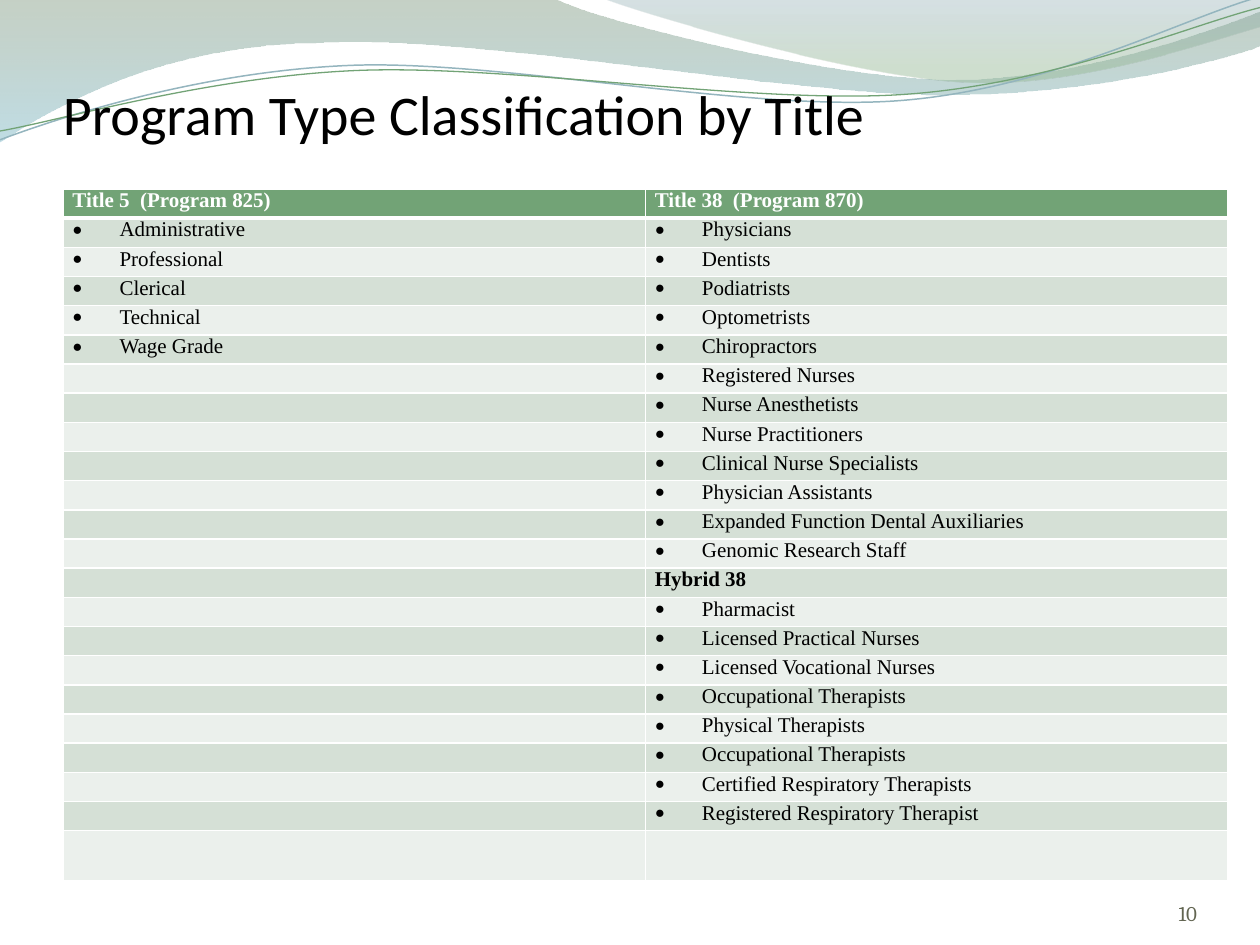
from pptx import Presentation
from pptx.dml.color import RGBColor
from pptx.enum.text import MSO_ANCHOR, PP_ALIGN
from pptx.oxml.ns import qn
from pptx.util import Cm, Pt
from lxml.etree import SubElement

# Content
TITLE = "Program Type Classification by Title"
NUMBER = "10"
HEADS = ["Title 5  (Program 825)", "Title 38  (Program 870)"]
LEFT = ["Administrative", "Professional", "Clerical", "Technical", "Wage Grade"]
HYBRID = "Hybrid 38"
RIGHT = [
    "Physicians", "Dentists", "Podiatrists", "Optometrists", "Chiropractors",
    "Registered Nurses", "Nurse Anesthetists", "Nurse Practitioners",
    "Clinical Nurse Specialists", "Physician Assistants",
    "Expanded Function Dental Auxiliaries", "Genomic Research Staff",
    HYBRID, "Pharmacist", "Licensed Practical Nurses",
    "Licensed Vocational Nurses", "Occupational Therapists",
    "Physical Therapists", "Occupational Therapists",
    "Certified Respiratory Therapists", "Registered Respiratory Therapist",
]
GREEN, BANDS, WHITE, BLACK = "72A376", ["EBF0EC", "D5E0D6"], "FFFFFF", "000000"
SERIF = "Times New Roman"

# Waves: a pair is a line to a point, six numbers are a Bezier curve.
# Coordinates are in units of 2.54 cm.
BLOBS = [
    ([(0, -0.01), (4.4, -0.01), (4.76, 0.17, 6.64, 0.63, 7.58, 0.63),
      (8.53, 0.63, 9.58, 0.26, 10, 0.09), (10.01, 0.36),
      (9.83, 0.44, 8.7, 0.76, 7.46, 0.75), (6.22, 0.75, 3.82, 0.28, 2.57, 0.34),
      (1.29, 0.35, 0.46, 0.83, -0.01, 1.13)],
     [(0, "809980", 45), (1, "8DC1CF", 55)]),
    ([(4.79, -0.01), (5.09, 0.11, 6.82, 0.62, 7.69, 0.65),
      (8.56, 0.69, 9.61, 0.32, 10, 0.21), (10, 0)],
     [(0, "779BA4", 30), (0.8, "96B996", 45)]),
]
LINES = [
    ([(0, 1.11), (0.48, 0.93, 1.58, 0.57, 2.77, 0.52),
      (3.95, 0.47, 5.93, 0.89, 7.13, 0.8), (8.33, 0.71, 9.38, 0.15, 9.98, -0.02)],
     "94B5BE", 0.85),
    ([(0, 1.04), (0.47, 0.96, 1.64, 0.61, 2.83, 0.56),
      (4.03, 0.51, 5.97, 0.83, 7.17, 0.75), (8.36, 0.67, 9.41, 0.21, 10, 0.06)],
     GREEN, 0.75),
]


def color(code):
    return RGBColor.from_string(code)


def wave(steps, close):
    """Draw the end points as a freeform, then bend its segments."""
    steps = [[Cm(2.54 * n) for n in step] for step in steps]
    ends = [step[-2:] for step in steps]
    pen = slide.shapes.build_freeform(*ends[0])
    pen.add_line_segments(ends[1:], close=close)
    shape = pen.convert_to_shape()
    shape.shadow.inherit = False
    nodes = list(shape._element.iter(qn("a:lnTo")))
    for node, step in zip(nodes, steps[1:]):
        if len(step) == 6:
            node.tag = qn("a:cubicBezTo")
            for i in (0, 1):
                x, y = step[2 * i:2 * i + 2]
                knot = SubElement(node, qn("a:pt"), x=str(x - shape.left),
                                  y=str(y - shape.top))
                node.insert(i, knot)
    return shape


def write(para, text, size, font, code, bold=False):
    run = para.add_run()
    run.text = text
    run.font.size, run.font.name, run.font.bold = Pt(size), font, bold
    run.font.color.rgb = color(code)


def label(box, text, size, font, code, align, top=0):
    frame = slide.shapes.add_textbox(*map(Cm, box)).text_frame
    frame.word_wrap = True
    frame.vertical_anchor = MSO_ANCHOR.BOTTOM
    frame.margin_left = frame.margin_right = frame.margin_bottom = 0
    frame.margin_top = Cm(top)
    frame.paragraphs[0].alignment = align
    write(frame.paragraphs[0], text, size, font, code)


def border(cell, head):
    props = cell._tc.get_or_add_tcPr()
    for side in "LRTB":
        width = Pt(3 if head and side == "B" else 1)
        line = SubElement(props, qn(f"a:ln{side}"), w=str(width))
        SubElement(SubElement(line, qn("a:solidFill")), qn("a:srgbClr"), val=WHITE)


def bullet(para):
    props = para._p.get_or_add_pPr()
    props.set("marL", str(Cm(0.95)))
    props.set("indent", str(-Cm(0.95)))
    SubElement(props, qn("a:buSzPct"), val="80000")
    SubElement(props, qn("a:buFont"), typeface=SERIF)
    SubElement(props, qn("a:buChar"), char="●")


def fill(cell, text, row):
    head = row == 0
    cell.margin_left = cell.margin_right = Cm(0.19)
    cell.margin_top = cell.margin_bottom = 0
    border(cell, head)
    cell.fill.solid()
    cell.fill.fore_color.rgb = color(GREEN if head else BANDS[row % 2])
    para = cell.text_frame.paragraphs[0]
    if not text:
        SubElement(para._p, qn("a:endParaRPr"), sz="1200")
        return
    bold = head or text == HYBRID
    if not bold:
        bullet(para)
    write(para, text, 12, SERIF, WHITE if head else BLACK, bold)


deck = Presentation()
deck.slide_width, deck.slide_height = Cm(25.4), Cm(19.05)
slide = deck.slides.add_slide(deck.slide_layouts[6])

# Waves at the top
for steps, stops in BLOBS:
    shape = wave(steps, True)
    shape.line.fill.background()
    shape.fill.gradient()
    shape.fill.gradient_angle = 270
    for stop, (place, code, alpha) in zip(shape.fill.gradient_stops, stops):
        stop.position = place
        stop.color.rgb = color(code)
        tint = stop._gs.find(qn("a:srgbClr"))
        SubElement(tint, qn("a:alpha"), val=str(alpha * 1000))
for steps, code, width in LINES:
    shape = wave(steps, False)
    shape.fill.background()
    shape.line.color.rgb = color(code)
    shape.line.width = Pt(width)

# Title
label((1.27, 0.84, 22.86, 2.11), TITLE, 32, "Calibri", BLACK, PP_ALIGN.LEFT, 0.13)

# Table: heads, one row an entry, and a taller empty row at the end
count = len(RIGHT) + 2
high, last = 13.95, 1.0
table = slide.shapes.add_table(count, 2, Cm(1.27), Cm(3.81), Cm(23.48), Cm(high)).table
for row in table.rows:
    row.height = Cm((high - last) / (count - 1))
table.rows[count - 1].height = Cm(last)
for col, items in enumerate([LEFT, RIGHT]):
    texts = [HEADS[col]] + items
    texts += [""] * (count - len(texts))
    for row, text in enumerate(texts):
        fill(table.cell(row, col), text, row)

# Slide number
label((22.02, 17.65, 2.11, 1.02), NUMBER, 12, "Cambria", "626551", PP_ALIGN.RIGHT)

deck.save("out.pptx")
